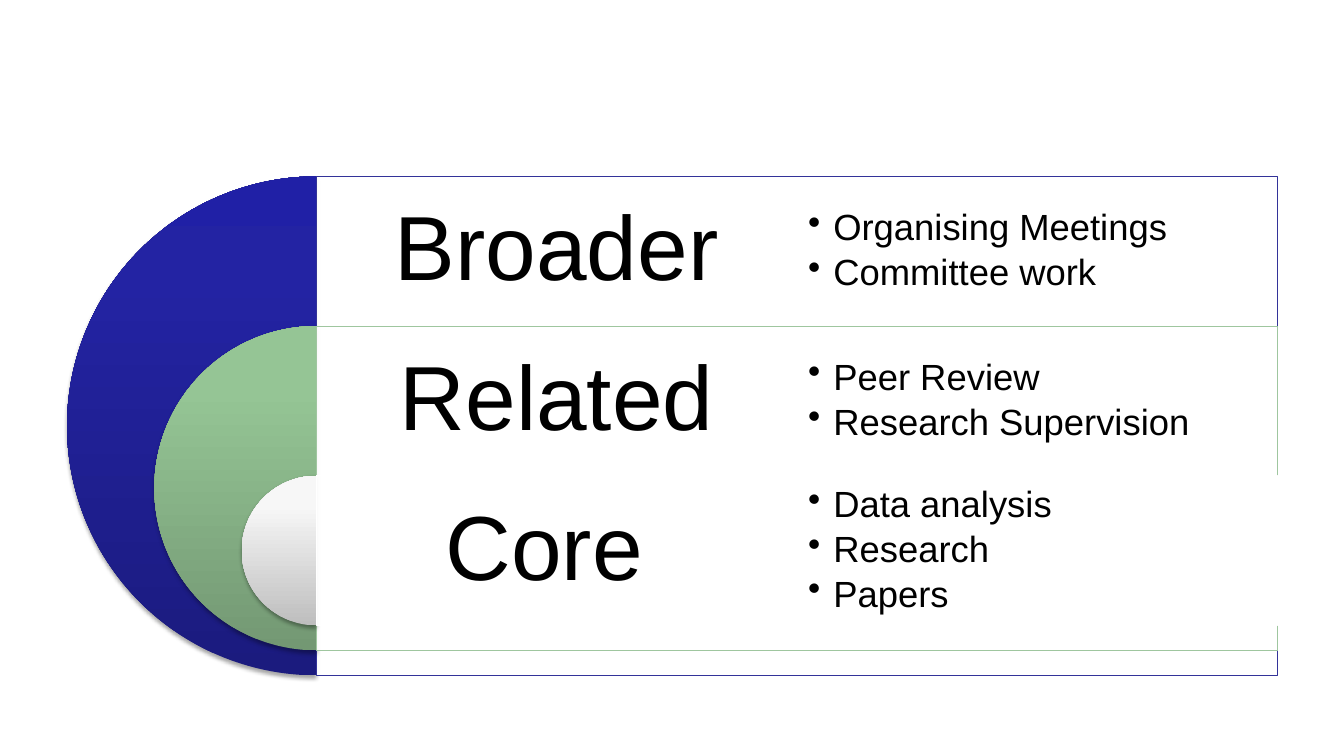
from copy import deepcopy
from dataclasses import dataclass

from lxml.etree import SubElement
from pptx import Presentation
from pptx.dml.color import RGBColor
from pptx.enum.shapes import MSO_SHAPE
from pptx.enum.text import MSO_ANCHOR, PP_ALIGN
from pptx.oxml.ns import qn
from pptx.shapes.autoshape import Shape
from pptx.util import Emu, Inches, Pt

HUES = {
    "ink": "000000", "paper": "FFFFFF",
    "navy": "333399", "navy low": "1B1B7E", "navy mid": "2323A3", "navy top": "2020A6",
    "leaf": "9FC69F", "leaf low": "739873", "leaf mid": "95C595", "leaf top": "95C795",
    "pale": "FFFFFF", "pale low": "BEBEBE", "pale mid": "F7F7F7", "pale top": "F8F8F8",
}

# Grid: two text columns right of the axis, rows of 30% of the largest ring.
WIDE, HIGH = Inches(13.33), Inches(7.5)
AXIS, TOP = Inches(3.14), Inches(1.75)
RING = Inches(4.95)
ROW = RING * 0.3
COL = Inches(9.53) / 2


@dataclass
class Layer:
    name: str
    hue: str
    share: float
    items: list[str]


LAYERS = [
    Layer("Broader", "navy", 1, ["Organising Meetings", "Committee work"]),
    Layer("Related", "leaf", 0.65, ["Peer Review", "Research Supervision"]),
    Layer("Core ", "pale", 0.3, ["Data analysis", "Research", "Papers"]),
]


def tint(name: str) -> RGBColor:
    return RGBColor.from_string(HUES[name])


def add_node(base, tag: str, **attrs):
    return SubElement(base, qn(tag), {key: str(val) for key, val in attrs.items()})


def add_form(slide, kind: MSO_SHAPE, left: float, top: float, wide: float, high: float) -> Shape:
    return slide.shapes.add_shape(kind, *(Emu(round(n)) for n in (left, top, wide, high)))


def add_pie(slide, row: int, layer: Layer) -> None:
    """Draw the left half of a ring, shaded from bottom to top."""
    size = RING * layer.share
    pie = add_form(slide, MSO_SHAPE.PIE, AXIS - size / 2, TOP + row * ROW, size, size)
    pie.adjustments[0], pie.adjustments[1] = 54, 162
    pie.line.fill.background()
    pie.fill.gradient()
    pie.fill.gradient_angle = 90
    props = pie._element.spPr
    stops = props.find(".//" + qn("a:gsLst"))
    stops.append(deepcopy(stops[-1]))
    for stop, part, place in zip(pie.fill.gradient_stops, ("low", "mid", "top"), (0, 0.8, 1)):
        stop.color.rgb = tint(f"{layer.hue} {part}")
        stop.position = place
    cast = add_node(add_node(props, "a:effectLst"), "a:outerShdw", blurRad=Pt(3.1),
                    dist=Pt(1.8), dir=90 * 60000, rotWithShape=0)
    shade = add_node(cast, "a:srgbClr", val=HUES["ink"])
    add_node(shade, "a:alpha", val=35000)


def add_band(slide, row: int, layer: Layer) -> None:
    band = add_form(slide, MSO_SHAPE.RECTANGLE, AXIS, TOP + row * ROW, 2 * COL, RING * layer.share)
    band.shadow.inherit = False
    band.fill.solid()
    band.fill.fore_color.rgb = tint("paper")
    color = band._element.spPr.find(qn("a:solidFill"))[0]
    add_node(color, "a:alpha", val=90000)
    band.line.color.rgb = tint(layer.hue)
    band.line.width = Pt(0.75)


def add_text(slide, row: int, col: int, lines: list[str], *, size: int, inset: float,
             after: int, align: PP_ALIGN, dots: bool = False) -> None:
    """Fill one grid cell; after is the paragraph gap in percent."""
    place = (AXIS + col * COL, TOP + row * ROW, COL, ROW)
    frame = slide.shapes.add_textbox(*(Emu(round(n)) for n in place)).text_frame
    frame.word_wrap = True
    frame.vertical_anchor = MSO_ANCHOR.MIDDLE
    frame.margin_left = frame.margin_right = Inches(inset)
    frame.margin_top = frame.margin_bottom = Inches(inset)
    for i, line in enumerate(lines):
        para = frame.paragraphs[0] if i == 0 else frame.add_paragraph()
        para.alignment = align
        para.line_spacing = 0.9
        props = para._p.get_or_add_pPr()
        add_node(add_node(props, "a:spcAft"), "a:spcPct", val=after * 1000)
        if dots:
            para.level = 1
            props.set("marL", str(Inches(0.25)))
            props.set("indent", str(-Inches(0.25)))
            add_node(props, "a:buChar", char="•")
        run = para.add_run()
        run.text = line
        run.font.name = "Arial"
        run.font.size = Pt(size)
        run.font.color.rgb = tint("ink")


def main() -> None:
    deck = Presentation()
    deck.slide_width, deck.slide_height = WIDE, HIGH
    slide = deck.slides.add_slide(deck.slide_layouts[6])
    for row, layer in enumerate(LAYERS):
        add_pie(slide, row, layer)
        add_band(slide, row, layer)
        add_text(slide, row, 0, [layer.name], size=65, inset=0.27, after=35,
                 align=PP_ALIGN.CENTER)
    for row, layer in enumerate(LAYERS):
        add_text(slide, row, 1, layer.items, size=26, inset=0.11, after=15,
                 align=PP_ALIGN.LEFT, dots=True)
    deck.save("out.pptx")


if __name__ == "__main__":
    main()
